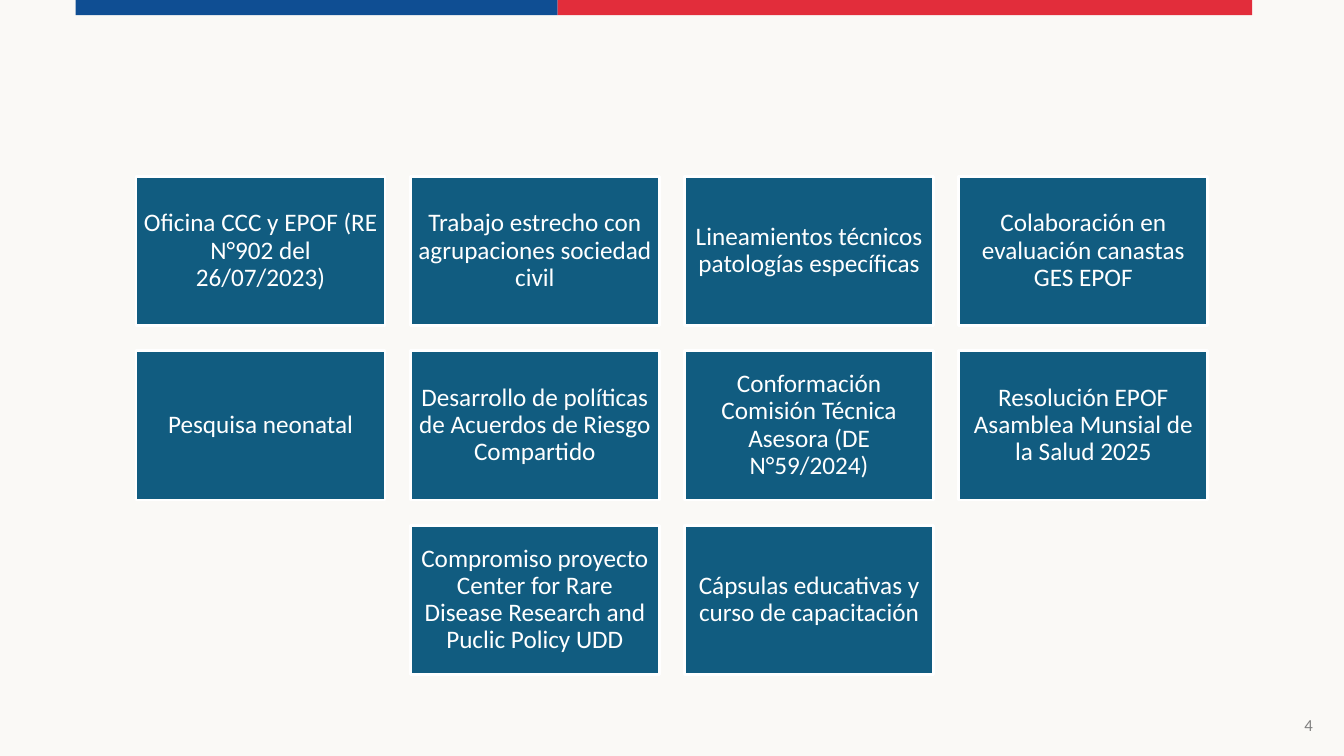
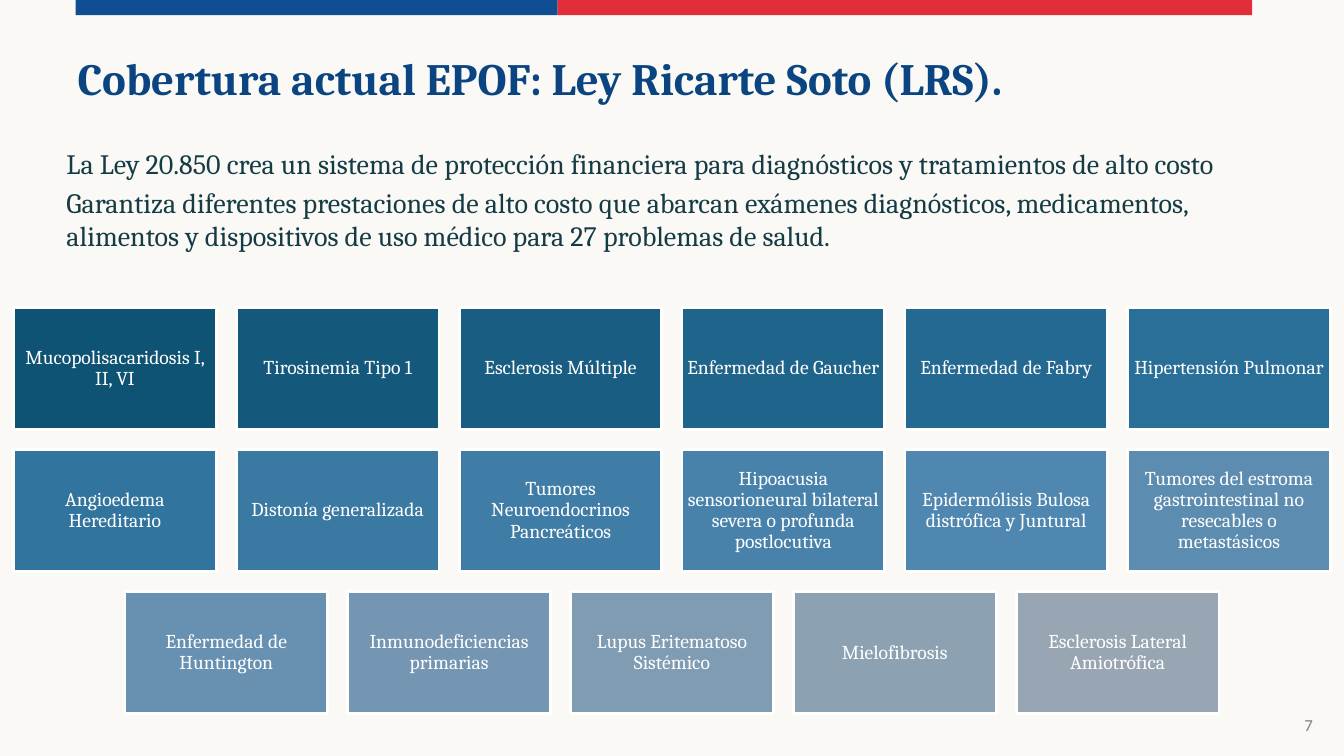
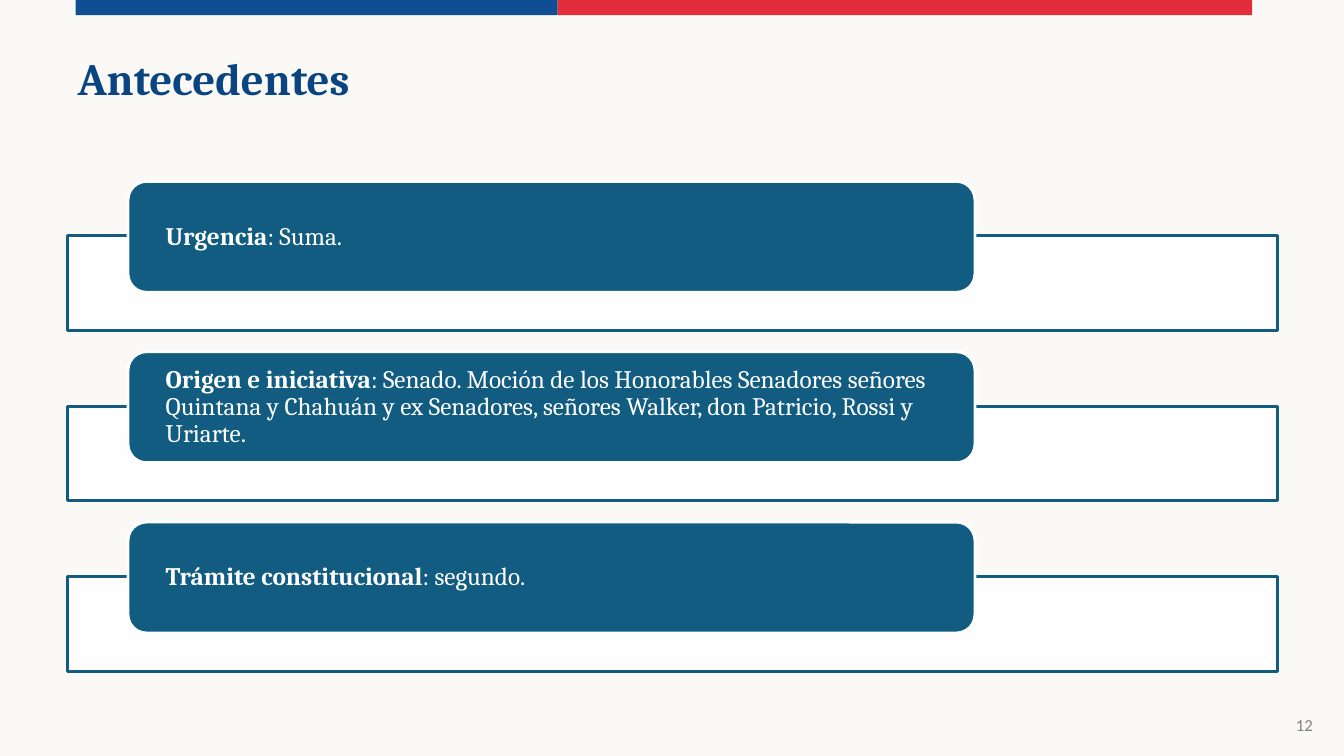
from dataclasses import dataclass

from lxml import etree
from pptx import Presentation
from pptx import util as u
from pptx.dml import color as dml
from pptx.enum import shapes, text
from pptx.oxml import ns

Inches = u.Inches

COLORS = {
    "background": "FAF9F6",
    "band_blue": "0F4E93",
    "band_red": "E22D3B",
    "title": "0B4581",
    "body": "153C45",
    "page_number": "808080",
    "white": "FFFFFF",
    "teal": "115C80",
    "sky": "296F98",
    "steel": "5087B0",
    "deep": "0F5374",
    "gray": "98A6B3",
}
SLIDE_WIDTH, SLIDE_HEIGHT = 13.33, 7.5
TITLE_ONLY, BLANK = 5, 6


@dataclass(frozen=True)
class Box:
    left: float
    top: float
    width: float
    height: float

    def lengths(self) -> tuple:
        return tuple(Inches(v) for v in (self.left, self.top, self.width, self.height))


@dataclass(frozen=True)
class Band:
    box: Box
    color: str


@dataclass(frozen=True)
class TileStyle:
    top: float
    width: float
    height: float
    gap: float
    font: str
    size: float
    inset: float


@dataclass(frozen=True)
class Fact:
    label: str
    detail: str


BANDS = [
    Band(Box(0.75, 0, 4.78, 0.15), COLORS["band_blue"]),
    Band(Box(5.53, 0, 6.89, 0.15), COLORS["band_red"]),
]

ACTION_STYLE = TileStyle(1.75, 2.47, 1.48, 0.25, "Calibri", 18, 0.07)
ACTION_ROWS = [
    [
        "Oficina CCC y EPOF (RE N°902 del 26/07/2023)",
        "Trabajo estrecho con agrupaciones sociedad civil",
        "Lineamientos técnicos patologías específicas",
        "Colaboración en evaluación canastas GES EPOF",
    ],
    [
        "Pesquisa neonatal",
        "Desarrollo de políticas de Acuerdos de Riesgo Compartido",
        "Conformación Comisión Técnica Asesora (DE N°59/2024)",
        "Resolución EPOF Asamblea Munsial de la Salud 2025",
    ],
    [
        "Compromiso proyecto Center for Rare Disease Research and Puclic Policy UDD",
        "Cápsulas educativas y curso de capacitación",
    ],
]

DISEASE_STYLE = TileStyle(3.05, 2.01, 1.21, 0.2, "Cambria", 14, 0.05)
DISEASE_ROWS = [
    [
        "Mucopolisacaridosis I, II, VI",
        "Tirosinemia Tipo 1",
        "Esclerosis Múltiple",
        "Enfermedad de Gaucher",
        "Enfermedad de Fabry",
        "Hipertensión Pulmonar",
    ],
    [
        "Angioedema Hereditario",
        "Distonía generalizada",
        "Tumores Neuroendocrinos Pancreáticos",
        "Hipoacusia sensorioneural bilateral severa o profunda postlocutiva",
        "Epidermólisis Bulosa distrófica y Juntural",
        "Tumores del estroma gastrointestinal no resecables o metastásicos",
    ],
    [
        "Enfermedad de Huntington",
        "Inmunodeficiencias primarias",
        "Lupus Eritematoso Sistémico",
        "Mielofibrosis",
        "Esclerosis Lateral Amiotrófica",
    ],
]
DISEASE_STOPS = [(0, "deep"), (5, "sky"), (10, "steel"), (16, "gray")]

LAW_POINTS = [
    "La Ley 20.850 crea un sistema de protección financiera para diagnósticos y "
    "tratamientos de alto costo",
    "Garantiza diferentes prestaciones de alto costo que abarcan exámenes diagnósticos, "
    "medicamentos, alimentos y dispositivos de uso médico para 27 problemas de salud.",
]

FACTS = [
    Fact("Urgencia", ": Suma."),
    Fact(
        "Origen e iniciativa",
        ": Senado. Moción de los Honorables Senadores señores Quintana y Chahuán "
        "y ex Senadores, señores Walker, don Patricio, Rossi y Uriarte.",
    ),
    Fact("Trámite constitucional", ": segundo."),
]


def rgb(value: str) -> dml.RGBColor:
    return dml.RGBColor.from_string(value)


def set_font(paragraph, name: str, size: float, color: str) -> None:
    paragraph.font.name = name
    paragraph.font.size = u.Pt(size)
    paragraph.font.color.rgb = rgb(color)


def add_block(slide, kind, box: Box, fill: str, line: str | None = None):
    block = slide.shapes.add_shape(kind, *box.lengths())
    block.shadow.inherit = False
    block.fill.solid()
    block.fill.fore_color.rgb = rgb(fill)
    if line:
        block.line.color.rgb = rgb(line)
        block.line.width = u.Pt(2)
    else:
        block.line.fill.background()
    return block


def set_opacity(block, percent: int) -> None:
    fill_color = block.element.spPr.find(ns.qn("a:solidFill"))[0]
    etree.SubElement(fill_color, ns.qn("a:alpha"), val=str(percent * 1000))


def set_insets(frame, horizontal: float, vertical: float) -> None:
    frame.margin_left = frame.margin_right = Inches(horizontal)
    frame.margin_top = frame.margin_bottom = Inches(vertical)


def add_bands_to_master(prs, slide) -> None:
    """Draw the bands on a slide, then move them to the master so all slides share them."""
    for band in BANDS:
        strip = add_block(slide, shapes.MSO_SHAPE.RECTANGLE, band.box, band.color)
        prs.slide_master.shapes.element.append(strip.element)


def add_slide(prs, page: int, title: str | None = None):
    slide = prs.slides.add_slide(prs.slide_layouts[TITLE_ONLY if title else BLANK])
    if title:
        heading = slide.shapes.title
        heading.left, heading.top, heading.width, heading.height = Box(
            0.67, 0.47, 10.8, 0.6
        ).lengths()
        frame = heading.text_frame
        frame.text = title
        frame.auto_size = text.MSO_AUTO_SIZE.NONE
        frame.vertical_anchor = text.MSO_ANCHOR.MIDDLE
        paragraph = frame.paragraphs[0]
        paragraph.alignment = text.PP_ALIGN.LEFT
        set_font(paragraph, "Cambria", 32, COLORS["title"])
        paragraph.font.bold = True

    number = slide.shapes.add_textbox(*Box(10.01, 7.04, 3.11, 0.31).lengths())
    number.text_frame.text = str(page)
    number.text_frame.word_wrap = True
    paragraph = number.text_frame.paragraphs[0]
    paragraph.alignment = text.PP_ALIGN.RIGHT
    set_font(paragraph, "Calibri", 12, COLORS["page_number"])
    return slide


def ramp_color(index: int, stops: list[tuple[int, str]]) -> str:
    """Blend linearly between the two colour stops around index."""
    for (start, first), (end, last) in zip(stops, stops[1:]):
        if index <= end:
            share = (index - start) / (end - start)
            pairs = zip(rgb(COLORS[first]), rgb(COLORS[last]))
            return "".join(f"{round(a + (b - a) * share):02X}" for a, b in pairs)
    return COLORS[stops[-1][1]]


def add_tiles(slide, rows: list[list[str]], style: TileStyle, fills: list[str]) -> None:
    """Draw rows of tiles, each row centred on the slide."""
    remaining_fills = iter(fills)
    for row, labels in enumerate(rows):
        row_width = len(labels) * (style.width + style.gap) - style.gap
        row_left = (SLIDE_WIDTH - row_width) / 2
        top = style.top + row * (style.height + style.gap)
        for column, label in enumerate(labels):
            left = row_left + column * (style.width + style.gap)
            tile = add_block(
                slide,
                shapes.MSO_SHAPE.RECTANGLE,
                Box(left, top, style.width, style.height),
                next(remaining_fills),
                COLORS["white"],
            )
            frame = tile.text_frame
            frame.text = label
            frame.word_wrap = True
            frame.vertical_anchor = text.MSO_ANCHOR.MIDDLE
            set_insets(frame, style.inset, style.inset)
            paragraph = frame.paragraphs[0]
            paragraph.alignment = text.PP_ALIGN.CENTER
            paragraph.line_spacing = 0.9
            set_font(paragraph, style.font, style.size, COLORS["white"])


def add_law_points(slide) -> None:
    summary = slide.shapes.add_textbox(*Box(0.4, 1.4, 12.54, 1.1).lengths())
    frame = summary.text_frame
    frame.word_wrap = True
    frame.margin_left = Inches(0.26)
    frame.text = "\n".join(LAW_POINTS)
    for index, paragraph in enumerate(frame.paragraphs):
        if index:
            paragraph.space_before = u.Pt(4)
        set_font(paragraph, "Cambria", 20, COLORS["body"])


def add_fact(slide, fact: Fact, top: float) -> None:
    strip = add_block(
        slide,
        shapes.MSO_SHAPE.RECTANGLE,
        Box(0.67, top + 0.54, 12, 0.94),
        COLORS["white"],
        COLORS["teal"],
    )
    set_opacity(strip, 90)
    card = add_block(
        slide,
        shapes.MSO_SHAPE.ROUNDED_RECTANGLE,
        Box(1.27, top, 8.4, 1.1),
        COLORS["teal"],
        COLORS["white"],
    )
    frame = card.text_frame
    frame.word_wrap = True
    frame.vertical_anchor = text.MSO_ANCHOR.MIDDLE
    set_insets(frame, 0.32, 0)
    paragraph = frame.paragraphs[0]
    paragraph.alignment = text.PP_ALIGN.LEFT
    paragraph.line_spacing = 0.9
    set_font(paragraph, "Cambria", 18, COLORS["white"])
    label = paragraph.add_run()
    label.text = fact.label
    label.font.bold = True
    paragraph.add_run().text = fact.detail


def main() -> None:
    prs = Presentation()
    prs.slide_width, prs.slide_height = Inches(SLIDE_WIDTH), Inches(SLIDE_HEIGHT)
    backdrop = prs.slide_master.background.fill
    backdrop.solid()
    backdrop.fore_color.rgb = rgb(COLORS["background"])

    actions = add_slide(prs, 4)
    add_bands_to_master(prs, actions)
    action_count = sum(map(len, ACTION_ROWS))
    add_tiles(actions, ACTION_ROWS, ACTION_STYLE, [COLORS["teal"]] * action_count)

    coverage = add_slide(prs, 7, "Cobertura actual EPOF: Ley Ricarte Soto (LRS).")
    add_law_points(coverage)
    disease_count = sum(map(len, DISEASE_ROWS))
    disease_fills = [ramp_color(i, DISEASE_STOPS) for i in range(disease_count)]
    add_tiles(coverage, DISEASE_ROWS, DISEASE_STYLE, disease_fills)

    background = add_slide(prs, 12, "Antecedentes")
    for index, fact in enumerate(FACTS):
        add_fact(background, fact, 1.8 + index * 1.69)

    prs.save("out.pptx")


if __name__ == "__main__":
    main()
